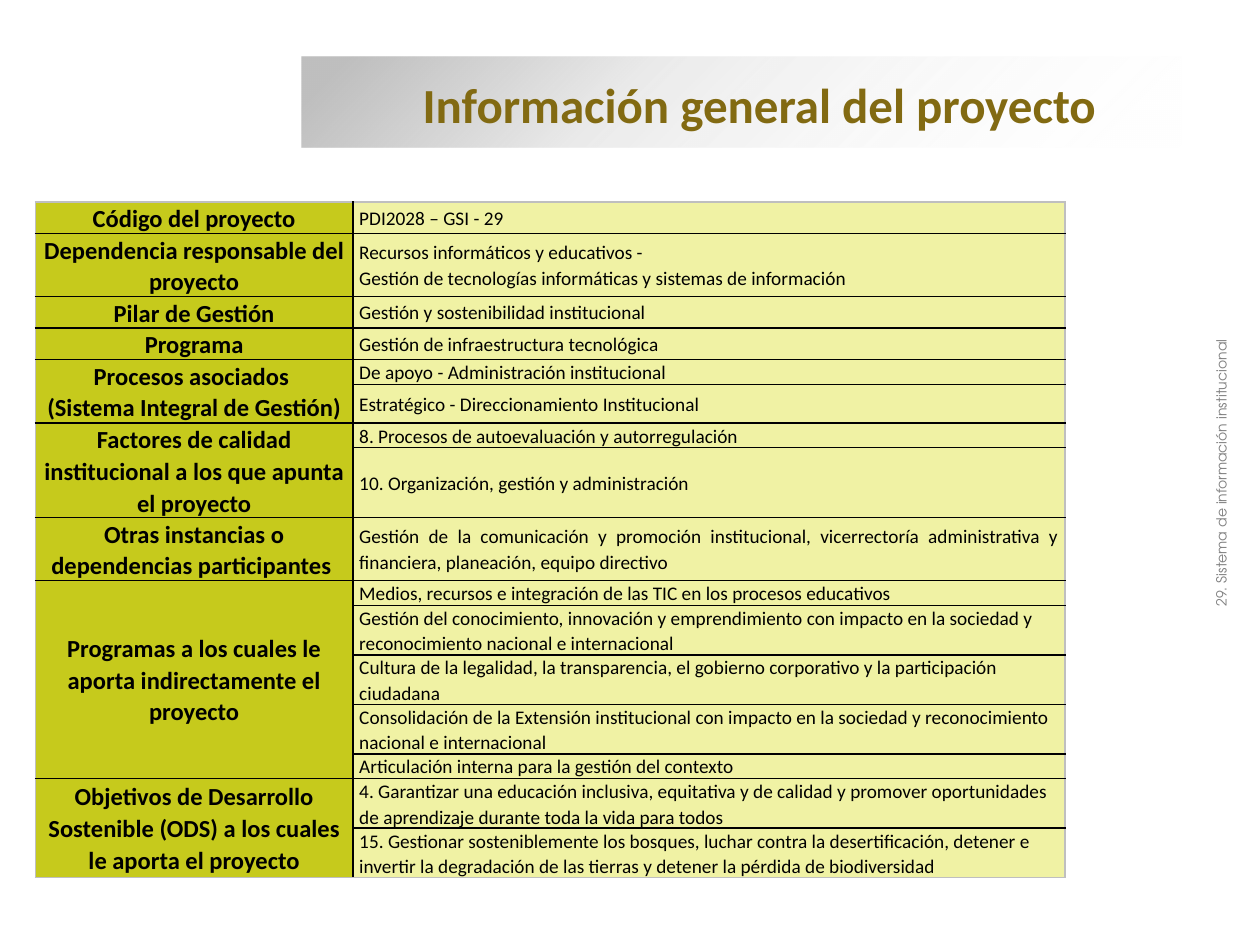
from lxml.etree import SubElement
from pptx import Presentation
from pptx.dml.color import RGBColor
from pptx.enum.shapes import MSO_SHAPE
from pptx.enum.text import MSO_ANCHOR, PP_ALIGN
from pptx.oxml import parse_xml
from pptx.oxml.ns import nsdecls, qn
from pptx.util import Pt

BLACK = RGBColor(0x00, 0x00, 0x00)
GRAY = RGBColor(0x80, 0x80, 0x80)
SILVER = RGBColor(0xBF, 0xBF, 0xBF)
WHITE = RGBColor(0xFF, 0xFF, 0xFF)
GOLD = RGBColor(0x82, 0x6A, 0x12)
OLIVE = RGBColor(0xC6, 0xCA, 0x1C)
CREAM = RGBColor(0xF0, 0xF2, 0xA4)
LEFT, MID, JUST = PP_ALIGN.LEFT, PP_ALIGN.CENTER, PP_ALIGN.JUSTIFY


def write(frame, text, size=11, color=BLACK, bold=False, font="Calibri",
          align=LEFT, line=None, after=None):
    """Fill a frame: newline starts a paragraph, vertical tab breaks a line."""
    for i, part in enumerate(text.split("\n")):
        para = frame.add_paragraph() if i else frame.paragraphs[0]
        para.text = part
        para.alignment = align
        if line:
            para.line_spacing = line
        if after:
            para.space_after = Pt(after)
        for run in para.runs:
            run.font.size, run.font.bold = Pt(size), bold
            run.font.name, run.font.color.rgb = font, color
        for gap in para._p.findall(qn("a:br")):
            SubElement(gap, qn("a:rPr")).set("sz", str(size * 100))


def edge(cell, side, color):
    """Draw one border of a cell, 1 pt wide."""
    props = cell._tc.get_or_add_tcPr()
    rule = parse_xml(
        f'<a:{side} {nsdecls("a")} w="12700"><a:solidFill>'
        f'<a:srgbClr val="{color}"/></a:solidFill></a:{side}>')
    props.insert(len(props.findall("*")) - 1, rule)


class Deck:
    def __init__(self, wide, high):
        self.prs = Presentation()
        self.prs.slide_width, self.prs.slide_height = Pt(wide), Pt(high)
        self.slide = self.prs.slides.add_slide(self.prs.slide_layouts[6])
        self.shapes = self.slide.shapes

    def fade(self, box, stops, angle, home):
        """Rectangle with a gradient; stops are place, color, opacity."""
        bar = home.add_shape(MSO_SHAPE.RECTANGLE, *map(Pt, box))
        bar.shadow.inherit = False
        bar.line.fill.background()
        bar.fill.gradient()
        grad = bar._element.spPr.find(qn("a:gradFill"))
        marks = "".join(
            f'<a:gs pos="{pos * 1000}"><a:srgbClr val="{color}">'
            f'<a:alpha val="{alpha * 1000}"/></a:srgbClr></a:gs>'
            for pos, color, alpha in stops)
        grad.getparent().replace(grad, parse_xml(
            f'<a:gradFill {nsdecls("a")} rotWithShape="1"><a:gsLst>{marks}'
            f'</a:gsLst><a:lin ang="{angle * 60000}" scaled="0"/></a:gradFill>'))

    def label(self, box, text, home=None, turn=0, anchor=MSO_ANCHOR.TOP, **style):
        shape = (home or self.shapes).add_textbox(*map(Pt, box))
        shape.rotation = turn
        frame = shape.text_frame
        frame.word_wrap = True
        frame.vertical_anchor = anchor
        write(frame, text, **style)

    def cell(self, cell, text, fill, pad, **style):
        cell.fill.solid()
        cell.fill.fore_color.rgb = fill
        cell.vertical_anchor = MSO_ANCHOR.MIDDLE
        cell.margin_left = cell.margin_right = Pt(pad)
        cell.margin_top = cell.margin_bottom = 0
        write(cell.text_frame, text, line=1.07, **style)

    def table(self, left, top, cols, groups):
        """Each group is a heading and its rows of text, height, alignment."""
        rows = [row for _, part in groups for row in part]
        high = sum(row[1] for row in rows)
        grid = self.shapes.add_table(
            len(rows), len(cols), Pt(left), Pt(top), Pt(sum(cols)), Pt(high)).table
        grid.first_row = grid.horz_banding = False
        for col, wide in zip(grid.columns, cols):
            col.width = Pt(wide)
        at = 0
        for head, part in groups:
            first = grid.cell(at, 0)
            if len(part) > 1:
                first.merge(grid.cell(at + len(part) - 1, 0))
            self.cell(first, head, OLIVE, 3, size=14, bold=True, align=MID)
            for i, (text, tall, align) in enumerate(part):
                grid.rows[at + i].height = Pt(tall)
                self.cell(grid.cell(at + i, 1), text, CREAM, 3.6,
                          align=align, after=8 if i else None)
                if i:
                    grid.cell(at + i, 0).fill.solid()
                    grid.cell(at + i, 0).fill.fore_color.rgb = OLIVE
            at += len(part)
        # Gray outer frame, black inner rules
        last = len(rows) - 1
        for r in range(len(rows)):
            for c in range(2):
                outer = {"lnL": c == 0, "lnR": c == 1,
                         "lnT": r == 0, "lnB": r == last}
                if c == 0 and grid.cell(r, 0).is_merge_origin:
                    outer["lnB"] = r + grid.cell(r, 0).span_height > last
                for side, out in outer.items():
                    edge(grid.cell(r, c), side, SILVER if out else BLACK)


GROUPS = [
    ("Código del proyecto", [("PDI2028 – GSI - 29", 18, LEFT)]),
    ("Dependencia responsable del proyecto", [
        ("Recursos informáticos y educativos -\n"
         "Gestión de tecnologías informáticas y sistemas de información", 36, LEFT)]),
    ("Pilar de Gestión", [("Gestión y sostenibilidad institucional", 18, LEFT)]),
    ("Programa", [("Gestión de infraestructura tecnológica", 18, JUST)]),
    ("Procesos asociados \v(Sistema Integral de Gestión)", [
        ("De apoyo - Administración institucional", 14, LEFT),
        ("Estratégico - Direccionamiento Institucional", 22, LEFT)]),
    ("Factores de calidad institucional a los que apunta el proyecto", [
        ("8. Procesos de autoevaluación y autorregulación", 14, LEFT),
        ("10. Organización, gestión y administración", 40, LEFT)]),
    ("Otras instancias o dependencias participantes ", [
        ("Gestión de la comunicación y promoción institucional, vicerrectoría "
         "administrativa y financiera, planeación, equipo directivo", 36, JUST)]),
    ("Programas a los cuales le aporta indirectamente el proyecto", [
        ("Medios, recursos e integración de las TIC en los procesos educativos",
         14, LEFT),
        ("Gestión del conocimiento, innovación y emprendimiento con impacto en la "
         "sociedad y reconocimiento nacional e internacional", 28, LEFT),
        ("Cultura de la legalidad, la transparencia, el gobierno corporativo y la "
         "participación ciudadana", 28, LEFT),
        ("Consolidación de la Extensión institucional con impacto en la sociedad y "
         "reconocimiento nacional e internacional", 28, LEFT),
        ("Articulación interna para la gestión del contexto", 14, LEFT)]),
    ("Objetivos de Desarrollo Sostenible (ODS) a los cuales le aporta el proyecto", [
        ("4. Garantizar una educación inclusiva, equitativa y de calidad y promover "
         "oportunidades de aprendizaje durante toda la vida para todos", 28, LEFT),
        ("15. Gestionar sosteniblemente los bosques, luchar contra la "
         "desertificación, detener e invertir la degradación de las tierras y "
         "detener la pérdida de biodiversidad", 28, LEFT)]),
]


def main():
    deck = Deck(720, 540)
    # Title on its fading bar
    group = deck.shapes.add_group_shape().shapes
    deck.fade((172.5, 32.4, 502.5, 52),
              [(5, SILVER, 100), (37, SILVER, 31), (100, WHITE, 0)], 45, group)
    deck.label((234.5, 39, 446.5, 41), "Información general del proyecto", group,
               anchor=MSO_ANCHOR.MIDDLE, size=28, color=GOLD, bold=True)
    # Project facts
    deck.table(20.2, 115.5, (181.5, 407), GROUPS)
    # Side label
    deck.label((528.5, 257, 348.5, 26.6), "29. Sistema de información institucional",
               turn=270, size=8, color=GRAY, font="TeX Gyre Adventor", align=MID)
    deck.prs.save("out.pptx")


if __name__ == "__main__":
    main()
